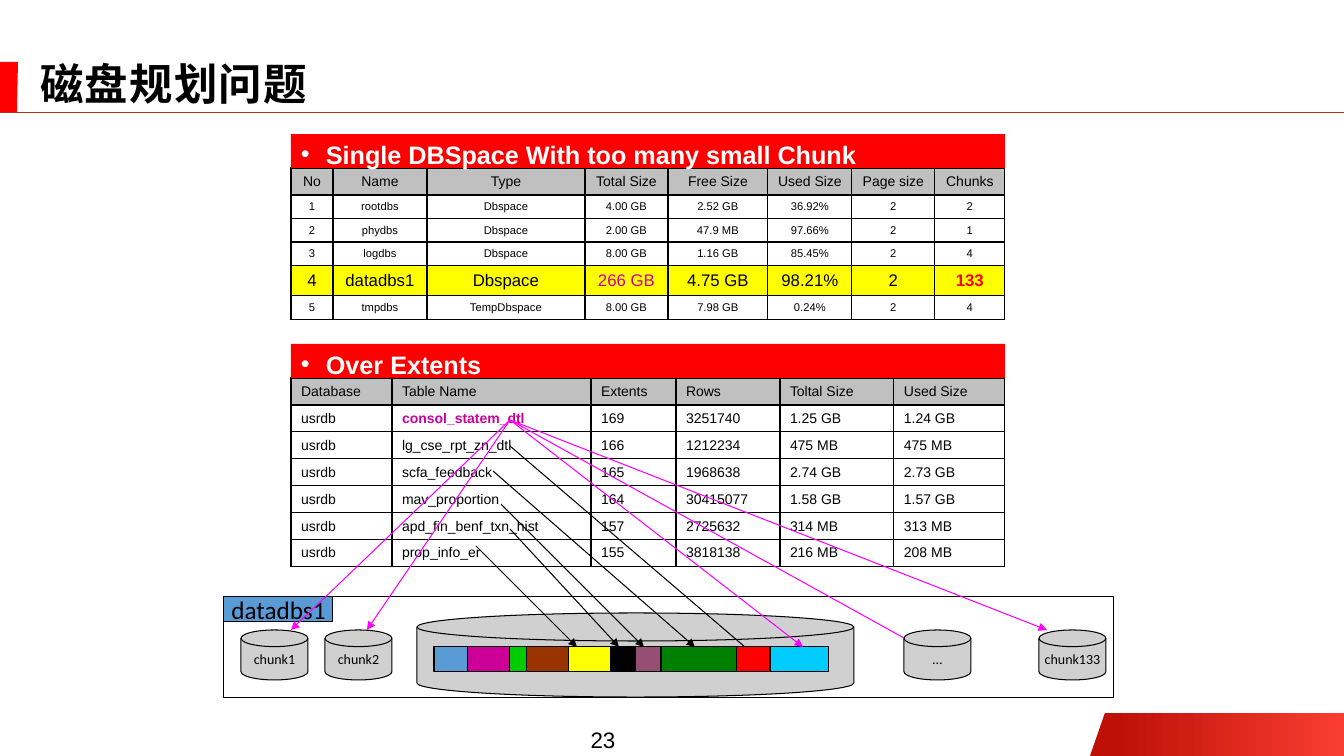
from lxml.etree import SubElement, Element
from pptx import Presentation
from pptx.dml.color import RGBColor
from pptx.enum.shapes import MSO_CONNECTOR, MSO_SHAPE
from pptx.enum.text import MSO_ANCHOR, MSO_AUTO_SIZE, PP_ALIGN
from pptx.oxml.ns import qn
from pptx.util import Emu, Pt

PX_PER_INCH = 100.8
BLACK, WHITE, RED, GREY = "000000", "FFFFFF", "FF0000", "C0C0C0"
YELLOW, PURPLE, BLUE, MAGENTA = "FFFF00", "CC0099", "5B9BD5", "FF00FF"
CENTER, LEFT = PP_ALIGN.CENTER, PP_ALIGN.LEFT


def px(n):
    return Emu(round(n * 914400 / PX_PER_INCH))


def rgb(value):
    return RGBColor.from_string(value)


class Deck:
    """Holds the presentation, the current slide and the drawing style."""

    def __init__(self, width, height):
        self.prs = Presentation()
        self.prs.slide_width, self.prs.slide_height = px(width), px(height)
        self.s = self.prs.slides.add_slide(self.prs.slide_layouts[5])
        self.line_width = Pt(0.75)

    def style_text(self, p, size, font="Arial", color=BLACK, bold=False, align=LEFT):
        p.alignment = align
        for r in p.runs:
            r.font.size, r.font.name, r.font.bold = Pt(size), font, bold
            r.font.color.rgb = rgb(color)

    def hang(self, p, indent, bullet=None):
        """Give the paragraph a hanging indent and, if asked, a bullet."""
        pPr = p._p.get_or_add_pPr()
        pPr.set("marL", str(px(indent)))
        pPr.set("indent", str(-px(indent)))
        if bullet:
            SubElement(pPr, qn("a:buFont"), typeface="Arial")
            SubElement(pPr, qn("a:buChar"), char=bullet)

    def title(self, text, x, y, w, h):
        sp = self.s.shapes.title
        sp.left, sp.top, sp.width, sp.height = px(x), px(y), px(w), px(h)
        tf = sp.text_frame
        tf.text = text
        tf.auto_size = MSO_AUTO_SIZE.NONE
        tf.vertical_anchor = MSO_ANCHOR.MIDDLE
        p = tf.paragraphs[0]
        p.line_spacing = 0.9
        self.style_text(p, 31, "Noto Sans CJK SC", bold=True)
        rPr = p.runs[0].font._element
        rPr.set("spc", "100")
        SubElement(rPr, qn("a:ea"), typeface="Noto Sans CJK SC")

    def page_number(self, text, x, y, w, h):
        tf = self.s.shapes.add_textbox(px(x), px(y), px(w), px(h)).text_frame
        tf.text = text
        tf.word_wrap = False
        tf.vertical_anchor = MSO_ANCHOR.BOTTOM
        self.style_text(tf.paragraphs[0], 16, align=CENTER)

    def shape(self, kind, x, y, w, h, fill=None, line=BLACK, alpha=None):
        sp = self.s.shapes.add_shape(kind, px(x), px(y), px(w), px(h))
        sp.shadow.inherit = False
        if fill:
            sp.fill.solid()
            sp.fill.fore_color.rgb = rgb(fill)
        else:
            sp.fill.background()
        if alpha:
            clr = sp._element.spPr.find(qn("a:solidFill"))[0]
            SubElement(clr, qn("a:alpha"), val=str(alpha * 1000))
        if line:
            sp.line.color.rgb = rgb(line)
            sp.line.width = self.line_width
        else:
            sp.line.fill.background()
        return sp

    def box(self, x, y, w, h, fill=None):
        return self.shape(MSO_SHAPE.RECTANGLE, x, y, w, h, fill)

    def disk(self, x, y, w, h):
        return self.shape(MSO_SHAPE.FLOWCHART_MAGNETIC_DISK, x, y, w, h, GREY, alpha=74)

    def label(self, sp, text, size):
        tf = sp.text_frame
        tf.text = text
        tf.word_wrap = False
        tf.vertical_anchor = MSO_ANCHOR.MIDDLE
        self.style_text(tf.paragraphs[0], size, "Calibri", align=CENTER)

    def heading(self, text, x, y, w, h):
        tf = self.shape(MSO_SHAPE.RECTANGLE, x, y, w, h, RED, None).text_frame
        tf.text = text
        tf.word_wrap = True
        tf.vertical_anchor = MSO_ANCHOR.TOP
        self.hang(tf.paragraphs[0], 25, "•")
        self.style_text(tf.paragraphs[0], 18, color=WHITE, bold=True)

    def polygon(self, points):
        start, *rest = [(px(x), px(y)) for x, y in points]
        builder = self.s.shapes.build_freeform(*start)
        builder.add_line_segments(rest, close=True)
        sp = builder.convert_to_shape()
        sp.shadow.inherit = False
        sp.line.fill.background()
        return sp

    def line(self, start, end, color=BLACK, width=0.75, arrow=False):
        c = self.s.shapes.add_connector(
            MSO_CONNECTOR.STRAIGHT, *(px(n) for n in (*start, *end)))
        c.line.color.rgb = rgb(color)
        c.line.width = Pt(width)
        spPr = c._element.spPr
        if arrow:
            SubElement(spPr.find(qn("a:ln")), qn("a:tailEnd"), type="triangle")
        SubElement(spPr, qn("a:effectLst"))

    def table(self, x, y, cols, heights, rows, sizes, fills, accents, align):
        frame = self.s.shapes.add_table(
            len(rows), len(cols), px(x), px(y), px(sum(cols)), px(sum(heights)))
        table = frame.table
        table.first_row = table.horz_banding = False
        for col, width in zip(table.columns, cols):
            col.width = px(width)
        for i, values in enumerate(rows):
            table.rows[i].height = px(heights[i])
            for j, value in enumerate(values):
                cell = table.cell(i, j)
                cell.text = value
                cell.vertical_anchor = MSO_ANCHOR.MIDDLE
                if i in fills:
                    cell.fill.solid()
                    cell.fill.fore_color.rgb = rgb(fills[i])
                else:
                    cell.fill.background()
                color, bold = accents.get((i, j), (BLACK, False))
                p = cell.text_frame.paragraphs[0]
                self.hang(p, 38)
                self.style_text(p, sizes[i], color=color, bold=bold, align=align)
                self.cell_borders(cell)

    def cell_borders(self, cell):
        tcPr = cell._tc.get_or_add_tcPr()
        for k, side in enumerate("LRTB"):
            ln = Element(qn("a:ln" + side), w=str(Pt(1)))
            SubElement(SubElement(ln, qn("a:solidFill")), qn("a:srgbClr"), val=BLACK)
            tcPr.insert(k, ln)


DBSPACES = [row.split("|") for row in (
    "No|Name|Type|Total Size|Free Size|Used Size|Page size|Chunks",
    "1|rootdbs|Dbspace|4.00 GB|2.52 GB|36.92%|2|2",
    "2|phydbs|Dbspace|2.00 GB|47.9 MB|97.66%|2|1",
    "3|logdbs|Dbspace|8.00 GB|1.16 GB|85.45%|2|4",
    "4|datadbs1|Dbspace|266 GB|4.75 GB|98.21%|2|133",
    "5|tmpdbs|TempDbspace|8.00 GB|7.98 GB|0.24%|2|4")]
EXTENTS = [row.split("|") for row in (
    "Database|Table Name|Extents|Rows|Toltal Size|Used Size",
    "usrdb|consol_statem_dtl|169|3251740|1.25 GB|1.24 GB",
    "usrdb|lg_cse_rpt_zn_dtl|166|1212234|475 MB|475 MB",
    "usrdb|scfa_feedback|165|1968638|2.74 GB|2.73 GB",
    "usrdb|mav_proportion|164|30415077|1.58 GB|1.57 GB",
    "usrdb|apd_fin_benf_txn_hist|157|2725632|314 MB|313 MB",
    "usrdb|prop_info_er|155|3818138|216 MB|208 MB")]
CHUNKS = [(241, "chunk1"), (325, "chunk2"), (904, "…"), (1039, "chunk133")]
SEGMENTS = [(34, BLUE), (42, PURPLE), (17, "00CC00"), (42, "993300"), (42, YELLOW),
            (25, BLACK), (25, "954F72"), (76, "008000"), (33, RED), (59, "00CCFF")]
TABLE_LINKS = [((510, 446), 745, False), ((493, 471), 695, True), ((501, 504), 644, True),
               ((510, 529), 619, True), ((476, 546), 577, True)]
CHUNK_LINKS = [((291, 630), True), ((367, 630), True), ((803, 647), True),
               ((904, 638), False), ((1047, 630), True)]


def main():
    d = Deck(1344, 756)
    band = d.polygon([(1105, 713), (1344, 713), (1344, 756), (1090, 756)])
    band.fill.gradient()
    band.fill.gradient_angle = 0
    for stop, color, position in zip(band.fill.gradient_stops, ("BE1007", "F93D32"), (0.09, 1)):
        stop.color.rgb, stop.position = rgb(color), position
    tab = d.polygon([(0, 62), (18, 62), (17, 112), (0, 112)])
    tab.fill.solid()
    tab.fill.fore_color.rgb = rgb(RED)
    d.line((0, 112), (1344, 112), "B82E24", 0.5)
    d.page_number("23", 579, 721, 48, 37)
    d.title("磁盘规划问题", 30, 59, 1236, 54)

    d.table(291, 168, [42, 94, 158, 83, 100, 84, 83, 70], [25, 23, 23, 23, 28, 23], DBSPACES,
            [10, 8, 8, 8, 12, 8], {0: GREY, 4: YELLOW},
            {(4, 3): (PURPLE, False), (4, 7): (RED, True)}, CENTER)
    d.table(291, 378, [101, 199, 85, 104, 114, 111], [25] * 7, EXTENTS,
            [10] * 7, {0: GREY}, {(1, 1): (PURPLE, True)}, LEFT)
    d.heading("Single DBSpace With too many small Chunk", 291, 134, 714, 34)
    d.heading("Over Extents", 291, 344, 714, 34)

    d.box(224, 597, 890, 101)
    d.label(d.box(224, 597, 109, 25, BLUE), "datadbs1", 18)
    d.disk(417, 613, 437, 84)
    for x, name in CHUNKS:
        d.label(d.disk(x, 630, 67, 50), name, 10)
    x = 434
    for width, color in SEGMENTS:
        d.box(x, 647, width, 25, color)
        x += width
    for start, end_x, arrow in TABLE_LINKS:
        d.line(start, (end_x, 647), arrow=arrow)
    for end, arrow in CHUNK_LINKS:
        d.line((510, 420), end, MAGENTA, arrow=arrow)
    d.prs.save("out.pptx")


if __name__ == "__main__":
    main()
